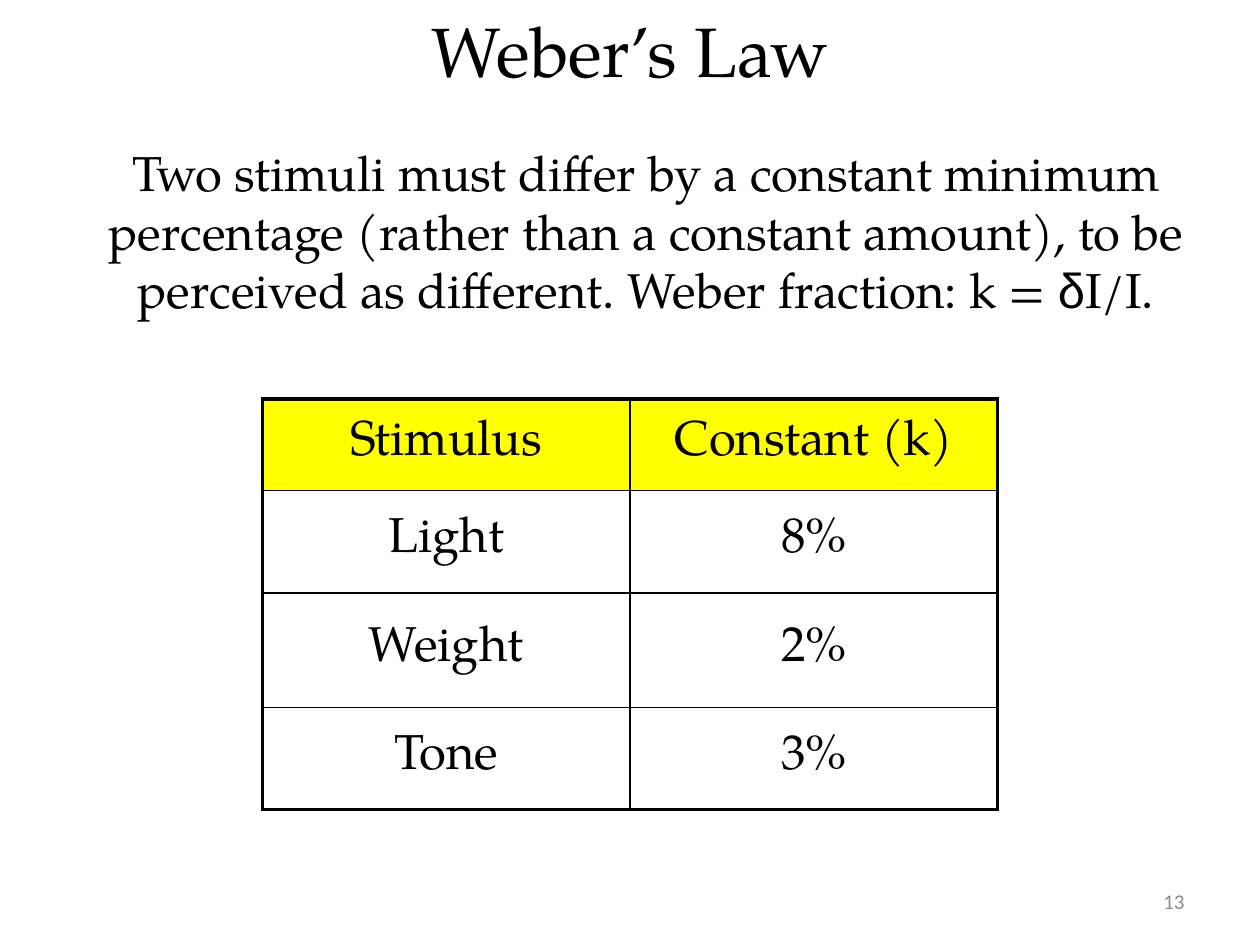
"""Build the Weber's Law slide with its table of Weber fractions."""
from dataclasses import dataclass

from lxml.etree import SubElement
from pptx import Presentation
from pptx.dml.color import RGBColor
from pptx.enum.text import MSO_ANCHOR, MSO_AUTO_SIZE, PP_ALIGN
from pptx.oxml import parse_xml
from pptx.oxml.ns import nsdecls, qn
from pptx.util import Cm, Pt

COLORS = {"text": "000000", "line": "000000", "header": "FFFF00", "number": "8C8C8C"}
SERIF = "TeX Gyre Pagella"
THICK, THIN = 2.25, 1
COL_WIDTH = 7.41


@dataclass
class Row:
    stimulus: str
    constant: str
    height: float
    fill: str | None = None


ROWS = [
    Row("Stimulus", "Constant (k)", 1.85, "header"),
    Row("Light", "8%", 2.06),
    Row("Weight", "2%", 2.31),
    Row("Tone", "3%", 2.06),
]


def place(sp, left: float, top: float, width: float, height: float) -> None:
    """Set a shape's position and size in centimetres."""
    sp.left, sp.top, sp.width, sp.height = map(Cm, (left, top, width, height))


def add_run(p, text: str, size: float, font: str = SERIF, color: str = "text") -> None:
    """Append one formatted run to a paragraph."""
    r = p.add_run()
    r.text = text
    r.font.size = Pt(size)
    r.font.name = font
    r.font.color.rgb = RGBColor.from_string(COLORS[color])


def start_text(tf, anchor: MSO_ANCHOR, align: PP_ALIGN, before: float = 0):
    """Prepare a text frame and return its first paragraph."""
    tf.word_wrap = True
    tf.vertical_anchor = anchor
    p = tf.paragraphs[0]
    p.alignment = align
    p.space_before = Pt(before)
    return p


def set_borders(cell, widths: dict[str, float]) -> None:
    """Draw the cell's left, right, top and bottom borders."""
    tcPr = cell._tc.get_or_add_tcPr()
    for i, (side, width) in enumerate(widths.items()):
        ln = parse_xml(f'<a:ln{side} {nsdecls("a")} w="{Pt(width)}"/>')
        fill = SubElement(ln, qn("a:solidFill"))
        SubElement(fill, qn("a:srgbClr"), val=COLORS["line"])
        tcPr.insert(i, ln)


def add_stimulus_table(s, rows: list[Row]) -> None:
    """Add the table with a thick outline and thin inner lines."""
    total = sum(row.height for row in rows)
    table = s.shapes.add_table(
        len(rows), 2, Cm(5.29), Cm(8.04), Cm(2 * COL_WIDTH), Cm(total)
    ).table
    table.first_row = table.horz_banding = False
    for col in table.columns:
        col.width = Cm(COL_WIDTH)
    for i, row in enumerate(rows):
        table.rows[i].height = Cm(row.height)
        for j, text in enumerate((row.stimulus, row.constant)):
            cell = table.cell(i, j)
            cell.vertical_anchor = MSO_ANCHOR.MIDDLE
            p = cell.text_frame.paragraphs[0]
            p.alignment = PP_ALIGN.CENTER
            p.space_before = Pt(5.6)
            add_run(p, text, 28)
            if row.fill:
                cell.fill.solid()
                cell.fill.fore_color.rgb = RGBColor.from_string(COLORS[row.fill])
            else:
                cell.fill.background()
            set_borders(cell, {
                "L": THICK if j == 0 else THIN,
                "R": THICK if j == 1 else THIN,
                "T": THICK if i == 0 else THIN,
                "B": THICK if i == len(rows) - 1 else THIN,
            })


def main() -> None:
    """Assemble and save the slide."""
    prs = Presentation()
    prs.slide_width, prs.slide_height = Cm(25.4), Cm(19.05)
    s = prs.slides.add_slide(prs.slide_layouts[1])

    title = s.shapes.title
    place(title, 1.27, 0, 22.86, 1.98)
    title.text_frame.auto_size = MSO_AUTO_SIZE.NONE
    add_run(start_text(title.text_frame, MSO_ANCHOR.MIDDLE, PP_ALIGN.CENTER), "Weber’s Law", 40)

    body = s.placeholders[1]
    place(body, 1.91, 2.74, 22.22, 4.65)
    body.text_frame.auto_size = MSO_AUTO_SIZE.NONE
    p = start_text(body.text_frame, MSO_ANCHOR.TOP, PP_ALIGN.CENTER, 5.6)
    pPr = p._p.get_or_add_pPr()
    pPr.set("marL", "0")
    pPr.set("indent", "0")
    SubElement(pPr, qn("a:buNone"))
    add_run(p, "Two stimuli must differ by a constant minimum percentage (rather than a "
               "constant amount), to be perceived as different. Weber fraction: k = ", 28)
    add_run(p, "δ", 28, "Arial")
    add_run(p, "I/I.", 28)

    add_stimulus_table(s, ROWS)

    number = s.shapes.add_textbox(Cm(18.21), Cm(17.65), Cm(5.92), Cm(1.02))
    p = start_text(number.text_frame, MSO_ANCHOR.MIDDLE, PP_ALIGN.RIGHT)
    add_run(p, "13", 12, "Calibri", "number")

    prs.save("out.pptx")


if __name__ == "__main__":
    main()
